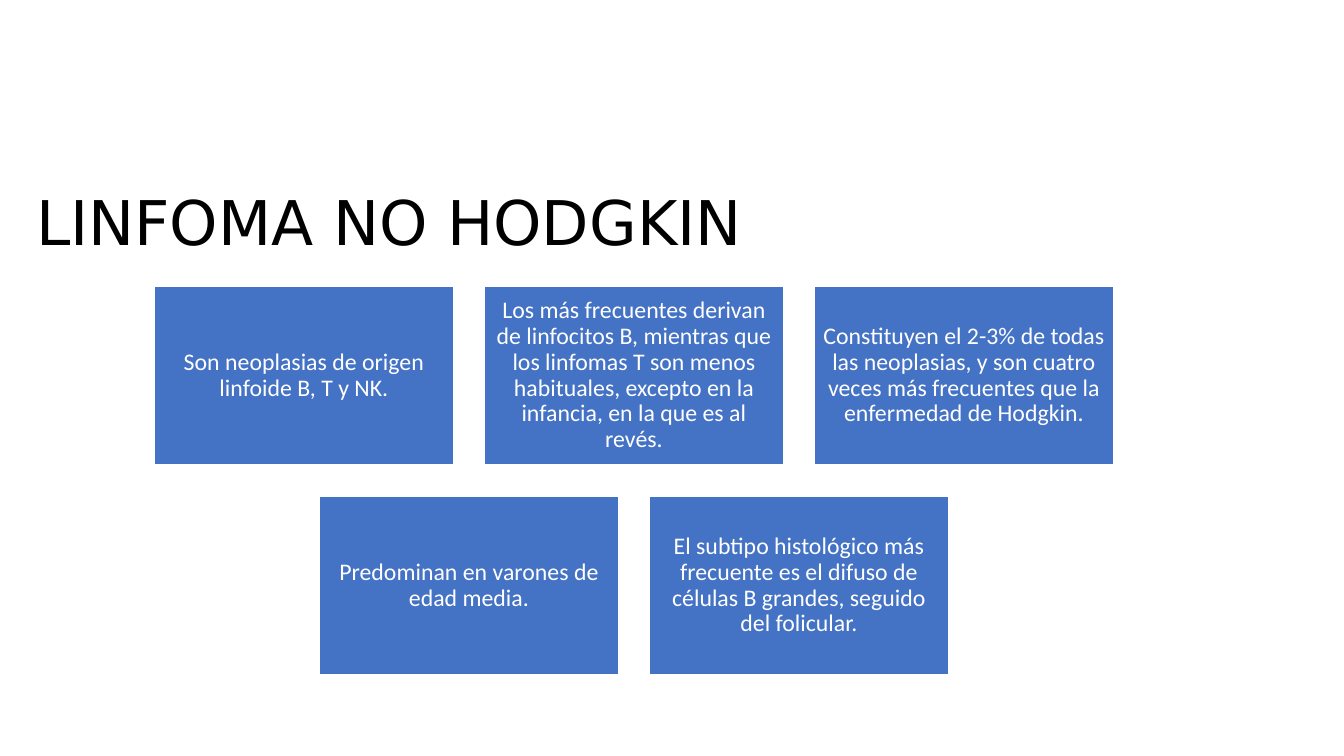
from pptx import Presentation
from pptx.dml.color import RGBColor
from pptx.enum.shapes import MSO_SHAPE
from pptx.enum.text import MSO_ANCHOR, MSO_AUTO_SIZE, PP_ALIGN
from pptx.util import Emu, Pt

TITLE = "LINFOMA NO HODGKIN"
ROWS = [
    [
        "Son neoplasias de origen linfoide B, T y NK.",
        "Los más frecuentes derivan de linfocitos B, mientras que los linfomas T "
        "son menos habituales, excepto en la infancia, en la que es al revés.",
        "Constituyen el 2-3% de todas las neoplasias, y son cuatro veces más "
        "frecuentes que la enfermedad de Hodgkin.",
    ],
    [
        "Predominan en varones de edad media.",
        "El subtipo histológico más frecuente es el difuso de células B grandes, "
        "seguido del folicular.",
    ],
]

BLACK = RGBColor(0x00, 0x00, 0x00)
WHITE = RGBColor(0xFF, 0xFF, 0xFF)
BLUE = RGBColor(0x44, 0x72, 0xC4)

SLIDE_WIDTH, SLIDE_HEIGHT = 1344, 756
TITLE_BOX = (26, 153, 1008, 146)
CARD_WIDTH, CARD_HEIGHT = 299, 179
COLUMN_GAP, ROW_GAP = 31, 31
GRID_CENTER, GRID_TOP = 634, 286
CARD_INSET = 7


def px(length):
    return Emu(round(length * 914400 / 100.8))


def place(shape, left, top, width, height):
    shape.left, shape.top = px(left), px(top)
    shape.width, shape.height = px(width), px(height)


def write(frame, text, font_name, size, color, alignment):
    frame.word_wrap = True
    frame.auto_size = MSO_AUTO_SIZE.NONE
    frame.vertical_anchor = MSO_ANCHOR.MIDDLE
    paragraph = frame.paragraphs[0]
    paragraph.text = text
    paragraph.alignment = alignment
    paragraph.line_spacing = 0.9
    font = paragraph.font
    font.name, font.size = font_name, Pt(size)
    font.color.rgb = color


def add_card(slide, text, left, top):
    card = slide.shapes.add_shape(
        MSO_SHAPE.RECTANGLE, px(left), px(top), px(CARD_WIDTH), px(CARD_HEIGHT)
    )
    card.shadow.inherit = False
    card.fill.solid()
    card.fill.fore_color.rgb = BLUE
    card.line.color.rgb = WHITE
    card.line.width = Pt(1)
    frame = card.text_frame
    frame.margin_left = frame.margin_right = px(CARD_INSET)
    frame.margin_top = frame.margin_bottom = px(CARD_INSET)
    write(frame, text, "Calibri", 17, WHITE, PP_ALIGN.CENTER)


def main():
    presentation = Presentation()
    presentation.slide_width = px(SLIDE_WIDTH)
    presentation.slide_height = px(SLIDE_HEIGHT)
    title_only = presentation.slide_layouts[5]
    slide = presentation.slides.add_slide(title_only)

    title = slide.shapes.title
    place(title, *TITLE_BOX)
    write(title.text_frame, TITLE, "DejaVu Sans", 44, BLACK, PP_ALIGN.LEFT)

    for row, texts in enumerate(ROWS):
        row_width = len(texts) * (CARD_WIDTH + COLUMN_GAP) - COLUMN_GAP
        row_left = GRID_CENTER - row_width / 2
        top = GRID_TOP + row * (CARD_HEIGHT + ROW_GAP)
        for column, text in enumerate(texts):
            add_card(slide, text, row_left + column * (CARD_WIDTH + COLUMN_GAP), top)

    presentation.save("out.pptx")


if __name__ == "__main__":
    main()
